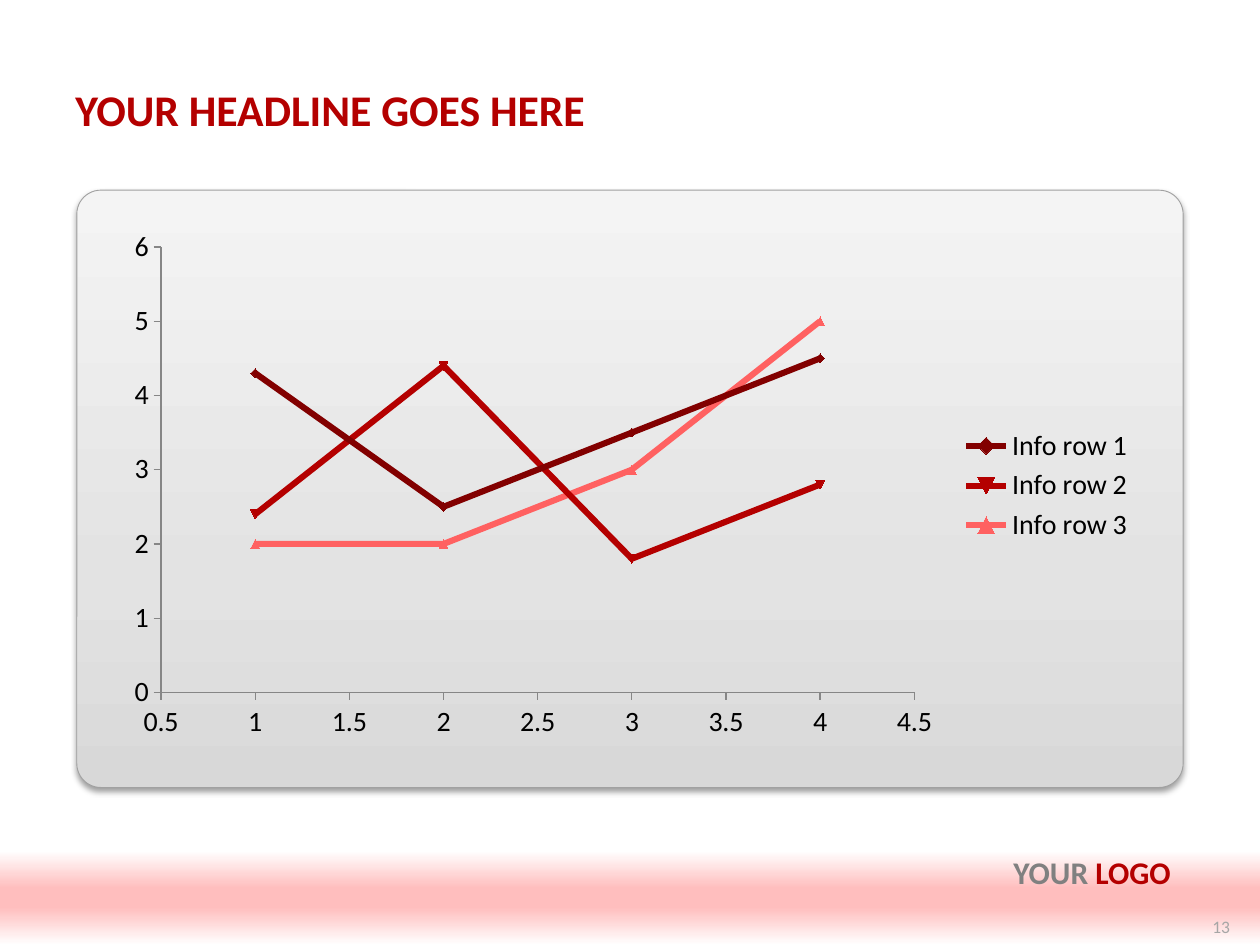
from dataclasses import dataclass

import pptx
import pptx.chart.data
import pptx.dml.color
import pptx.enum.chart
import pptx.enum.shapes
import pptx.enum.text
import pptx.oxml
import pptx.oxml.ns
import pptx.util
from pptx.dml.color import RGBColor
from pptx.util import Inches

FONT = "Calibri"
WHITE = RGBColor(0xFF, 0xFF, 0xFF)
BLACK = RGBColor(0x00, 0x00, 0x00)
PINK = RGBColor(0xFF, 0xBE, 0xBE)
RED = RGBColor(0xB4, 0x00, 0x00)
DARK_RED = RGBColor(0x82, 0x00, 0x00)
LIGHT_RED = RGBColor(0xFF, 0x61, 0x61)
GRAY = RGBColor(0x80, 0x80, 0x80)
AXIS_GRAY = RGBColor(0x86, 0x86, 0x86)
NUMBER_GRAY = RGBColor(0xA6, 0xA6, 0xA6)
PANEL_LINE = RGBColor(0xA1, 0xA1, 0xA1)
PANEL_STOPS = [
    (0, RGBColor(0xD8, 0xD8, 0xD8)),
    (35, RGBColor(0xE3, 0xE3, 0xE3)),
    (100, RGBColor(0xF4, 0xF4, 0xF4)),
]
BAND_STOPS = [(0, WHITE), (40, PINK), (60, PINK), (100, WHITE)]
Align = pptx.enum.text.PP_ALIGN
Anchor = pptx.enum.text.MSO_ANCHOR


@dataclass
class Run:
    text: str
    color: RGBColor


@dataclass
class Label:
    box: tuple[float, float, float, float]
    runs: list[Run]
    size: float
    bold: bool
    align: Align
    anchor: Anchor


@dataclass
class Series:
    name: str
    values: list[float]
    color: RGBColor


@dataclass
class Axis:
    minimum: float
    maximum: float
    step: float


LABELS = [
    Label((0.5, 0.59, 9, 0.55), [Run("YOUR HEADLINE GOES HERE", RED)],
          25, True, Align.LEFT, Anchor.MIDDLE),
    Label((9.39, 7.2, 0.47, 0.3), [Run("13", NUMBER_GRAY)],
          10, False, Align.RIGHT, Anchor.MIDDLE),
    Label((0.5, 6.72, 8.89, 0.55), [Run("YOUR ", GRAY), Run("LOGO", RED)],
          18, True, Align.RIGHT, Anchor.TOP),
]
SERIES = [
    Series("Info row 1", [4.3, 2.5, 3.5, 4.5], DARK_RED),
    Series("Info row 2", [2.4, 4.4, 1.8, 2.8], RED),
    Series("Info row 3", [2, 2, 3, 5], LIGHT_RED),
]
X_AXIS = Axis(0.5, 4.5, 0.5)
Y_AXIS = Axis(0, 6, 1)
PLOT_LAYOUT = {"x": 0.045, "y": 0.05, "w": 0.73, "h": 0.84}


def apply_format(target, values: dict) -> None:
    for name, value in values.items():
        setattr(target, name, value)


def format_font(font, size: float, color: RGBColor, bold: bool = False) -> None:
    apply_format(font, {"name": FONT, "size": pptx.util.Pt(size), "bold": bold})
    font.color.rgb = color


def add_gradient_shape(slide, kind, box, stops, angle: int):
    shape = slide.shapes.add_shape(kind, *map(Inches, box))
    shape.shadow.inherit = False
    shape.line.fill.background()
    shape.fill.gradient()
    shape.fill.gradient_angle = 0
    gradient = shape.fill._xPr.find(pptx.oxml.ns.qn("a:gradFill"))
    stop_xml = "".join(
        f'<a:gs pos="{position * 1000}"><a:srgbClr val="{color}"/></a:gs>'
        for position, color in stops)
    gradient.getparent().replace(gradient, pptx.oxml.parse_xml(
        f'<a:gradFill {pptx.oxml.ns.nsdecls("a")} rotWithShape="1"><a:gsLst>{stop_xml}</a:gsLst>'
        f'<a:lin ang="{angle * 60000}" scaled="0"/></a:gradFill>'))
    return shape


def add_panel(slide) -> None:
    panel = add_gradient_shape(slide, pptx.enum.shapes.MSO_SHAPE.ROUNDED_RECTANGLE,
                               (0.61, 1.51, 8.78, 4.74), PANEL_STOPS, 270)
    panel.adjustments[0] = 0.04
    panel.line.color.rgb = PANEL_LINE
    panel.line.width = pptx.util.Pt(0.5)
    effects = panel._element.spPr.find(pptx.oxml.ns.qn("a:effectLst"))
    effects.append(pptx.oxml.parse_xml(
        f'<a:outerShdw {pptx.oxml.ns.nsdecls("a")} blurRad="{pptx.util.Pt(3.5)}"'
        f' dist="{pptx.util.Pt(2)}" dir="5400000" rotWithShape="0">'
        '<a:srgbClr val="000000"><a:alpha val="38000"/></a:srgbClr></a:outerShdw>'))


def add_label(slide, label: Label) -> None:
    frame = slide.shapes.add_textbox(*map(Inches, label.box)).text_frame
    apply_format(frame, {"word_wrap": True, "vertical_anchor": label.anchor})
    paragraph = frame.paragraphs[0]
    paragraph.alignment = label.align
    for part in label.runs:
        run = paragraph.add_run()
        run.text = part.text
        format_font(run.font, label.size, part.color, label.bold)


def format_axis(axis, scale: Axis) -> None:
    apply_format(axis, {
        "minimum_scale": scale.minimum,
        "maximum_scale": scale.maximum,
        "major_unit": scale.step,
        "has_major_gridlines": False,
        "major_tick_mark": pptx.enum.chart.XL_TICK_MARK.OUTSIDE,
        "minor_tick_mark": pptx.enum.chart.XL_TICK_MARK.NONE,
    })
    apply_format(axis.tick_labels, {"number_format": "General", "number_format_is_linked": False})
    format_font(axis.tick_labels.font, 16, BLACK)
    axis.format.line.color.rgb = AXIS_GRAY
    axis.format.line.width = pptx.util.Pt(0.75)


def set_plot_layout(chart) -> None:
    """Fix the inner plot area as fractions of the chart."""
    plot_area = chart._chartSpace.chart.plotArea
    for layout in plot_area.findall(pptx.oxml.ns.qn("c:layout")):
        plot_area.remove(layout)
    sizes = "".join(f'<c:{key} val="{value}"/>' for key, value in PLOT_LAYOUT.items())
    plot_area.insert(0, pptx.oxml.parse_xml(
        f'<c:layout {pptx.oxml.ns.nsdecls("c")}><c:manualLayout><c:layoutTarget val="inner"/>'
        f'<c:xMode val="edge"/><c:yMode val="edge"/>{sizes}</c:manualLayout></c:layout>'))


def add_line_chart(slide) -> None:
    data = pptx.chart.data.XyChartData()
    for entry in SERIES:
        points = data.add_series(entry.name)
        for x, y in enumerate(entry.values, start=1):
            points.add_data_point(x, y)
    chart = slide.shapes.add_chart(pptx.enum.chart.XL_CHART_TYPE.XY_SCATTER_LINES,
                                   *map(Inches, (0.91, 1.75, 8.19, 4.21)), data).chart
    apply_format(chart, {"has_title": False, "has_legend": True})
    format_font(chart.font, 18, BLACK)
    apply_format(chart.legend, {
        "position": pptx.enum.chart.XL_LEGEND_POSITION.RIGHT, "include_in_layout": False})
    format_font(chart.legend.font, 16, BLACK)
    format_axis(chart.category_axis, X_AXIS)
    format_axis(chart.value_axis, Y_AXIS)
    set_plot_layout(chart)
    chart.plots[0].vary_by_categories = False
    for series, entry in zip(chart.plots[0].series, SERIES):
        series.smooth = False
        series.format.line.color.rgb = entry.color
        series.format.line.width = pptx.util.Pt(3.5)
        series.marker.size = 5
        series.marker.format.fill.solid()
        series.marker.format.fill.fore_color.rgb = entry.color
        series.marker.format.line.color.rgb = entry.color


def main() -> None:
    presentation = pptx.Presentation()
    apply_format(presentation, {"slide_width": Inches(10), "slide_height": Inches(7.5)})
    slide = presentation.slides.add_slide(presentation.slide_layouts[6])
    add_panel(slide)
    add_gradient_shape(slide, pptx.enum.shapes.MSO_SHAPE.RECTANGLE,
                       (0, 6.75, 10, 0.75), BAND_STOPS, 90)
    add_line_chart(slide)
    for label in LABELS:
        add_label(slide, label)
    presentation.save("out.pptx")


if __name__ == "__main__":
    main()
